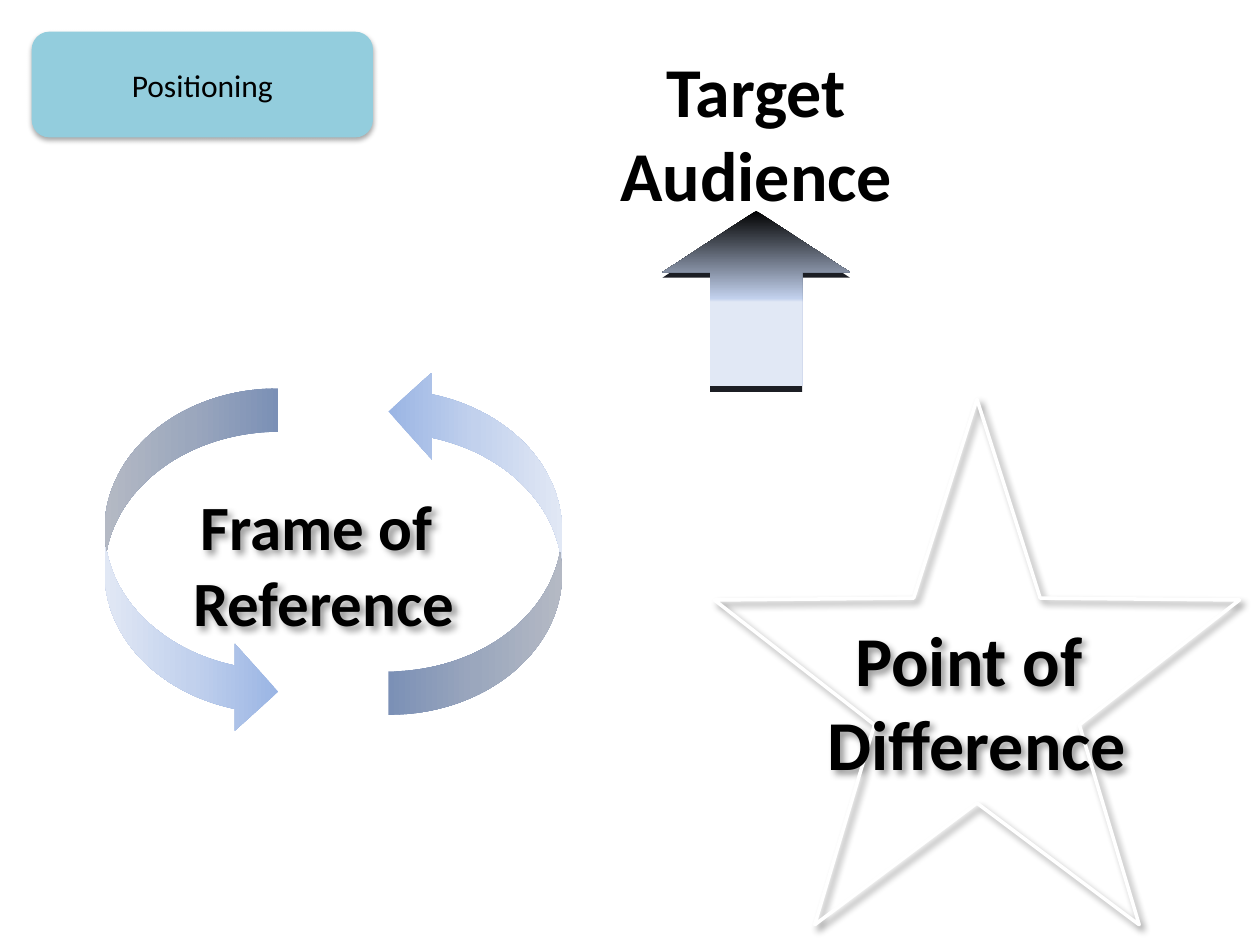
from dataclasses import dataclass

from lxml import etree
from pptx import Presentation
from pptx.dml.color import RGBColor
from pptx.enum import shapes, text
from pptx.oxml import ns
from pptx.util import Cm, Pt


@dataclass(frozen=True)
class Theme:
    font: str = "Calibri"
    ink: str = "000000"
    paper: str = "FFFFFF"
    tag: str = "93CDDD"
    edge: str = "1C1E24"
    cycle: tuple = ((0, "9AB5E4"), (50, "C2D1ED"), (100, "E1E8F5"))
    rise: tuple = ((0, "000000"), (50, "C2D1ED"), (52, "E1E8F5"), (100, "E1E8F5"))
    small: int = 18
    medium: int = 36
    large: int = 40


@dataclass(frozen=True)
class Box:
    """A rectangle in centimetres."""
    left: float
    top: float
    width: float
    height: float

    def inner(self, left, top, width, height):
        """A box placed relative to this one."""
        return Box(self.left + left, self.top + top, width, height)

    def lengths(self):
        return [Cm(n) for n in (self.left, self.top, self.width, self.height)]


THEME = Theme()
PRESET = shapes.MSO_SHAPE


def add_node(parent, tag, **attributes):
    node = etree.SubElement(parent, ns.qn(tag))
    for name, value in attributes.items():
        node.set(name, str(value))
    return node


def set_gradient(shape, stops, angle):
    """Fill with (percent, colour) stops; the angle runs clockwise."""
    shape.fill.background()
    properties = shape.element.spPr
    empty = properties.find(ns.qn("a:noFill"))
    gradient = etree.Element(ns.qn("a:gradFill"), rotWithShape="1")
    stop_list = add_node(gradient, "a:gsLst")
    for percent, colour in stops:
        stop = add_node(stop_list, "a:gs", pos=percent * 1000)
        add_node(stop, "a:srgbClr", val=colour)
    add_node(gradient, "a:lin", ang=angle * 60000, scaled=0)
    properties.replace(empty, gradient)


def set_shadow(shape, opacity, blur, distance, angle):
    shape.shadow.inherit = False
    effects = shape.element.spPr.find(ns.qn("a:effectLst"))
    shadow = add_node(effects, "a:outerShdw", blurRad=Pt(blur), dist=Pt(distance),
                      dir=angle * 60000, rotWithShape=0)
    colour = add_node(shadow, "a:srgbClr", val=THEME.ink)
    add_node(colour, "a:alpha", val=opacity * 1000)


def add_preset(parent, preset, box, adjustments=()):
    """Add a shape with no fill, line or shadow."""
    shape = parent.shapes.add_shape(preset, *box.lengths())
    for index, value in enumerate(adjustments):
        shape.adjustments[index] = value
    shape.fill.background()
    shape.line.fill.background()
    shape.shadow.inherit = False
    return shape


def set_fill(shape, colour):
    shape.fill.solid()
    shape.fill.fore_color.rgb = RGBColor.from_string(colour)


def write(shape, paragraphs, size, bold=True, wrap=False):
    frame = shape.text_frame
    frame.word_wrap = wrap
    for index, words in enumerate(paragraphs):
        para = frame.add_paragraph() if index else frame.paragraphs[0]
        para.text = words
        para.alignment = text.PP_ALIGN.CENTER
        para.font.name = THEME.font
        para.font.size = Pt(size)
        para.font.bold = bold
        para.font.color.rgb = RGBColor.from_string(THEME.ink)


def draw_tag(page, box):
    tag = add_preset(page, PRESET.ROUNDED_RECTANGLE, box, [0.167])
    set_fill(tag, THEME.tag)
    set_shadow(tag, 35, 3.1, 1.8, 90)
    write(tag, ["Positioning"], THEME.small, bold=False)
    tag.text_frame.vertical_anchor = text.MSO_ANCHOR.MIDDLE


def draw_reference(page, box):
    """Two curved arrows circling the caption."""
    group = page.shapes.add_group_shape()
    width, height, drop = 3.5, 6.99, 0.41
    for left, top, turn in ((0, drop, 0), (box.width - width, 0, 180)):
        arrow = add_preset(group, PRESET.CURVED_RIGHT_ARROW,
                           box.inner(left, top, width, height))
        arrow.rotation = turn
        set_gradient(arrow, THEME.cycle, 180)
    caption = group.shapes.add_textbox(*box.inner(1.5, 2.29, 5.84, 3.33).lengths())
    caption.fill.background()
    write(caption, ["Frame of \vReference"], THEME.medium)
    set_shadow(caption, 40, 4, 3, 45)


def draw_difference(page, box):
    star = add_preset(page, PRESET.STAR_5_POINT, box, [0.195, 1.051, 1.106])
    star.line.color.rgb = RGBColor.from_string(THEME.paper)
    star.line.width = Pt(2)
    set_shadow(star, 40, 4, 3, 45)
    write(star, ["Point of \vDifference"], THEME.large)
    star.text_frame.vertical_anchor = text.MSO_ANCHOR.MIDDLE


def draw_audience(page, box):
    """A raised arrow, with a dark lower edge, pointing at the caption."""
    group = page.shapes.add_group_shape()
    width, height, depth = 3.78, 3.54, 0.11
    left = (box.width - width) / 2
    top = box.height - height - depth
    for offset in (depth, 0):
        arrow = add_preset(group, PRESET.UP_ARROW,
                           box.inner(left, top + offset, width, height), [0.49, 0.35])
        if offset:
            set_fill(arrow, THEME.edge)
        else:
            set_gradient(arrow, THEME.rise, 90)
    caption = group.shapes.add_textbox(*box.inner(0, 0, box.width, 3.68).lengths())
    write(caption, ["Target", "Audience"], THEME.large, wrap=True)


def main():
    deck = Presentation()
    deck.slide_width, deck.slide_height = Cm(25.4), Cm(19.05)
    page = deck.slides.add_slide(deck.slide_layouts[6])
    draw_tag(page, Box(0.64, 0.64, 6.88, 2.13))
    draw_reference(page, Box(2.11, 7.42, 9.22, 7.4))
    draw_difference(page, Box(14.4, 8.05, 10.59, 10.59))
    draw_audience(page, Box(10.8, 0.84, 8.89, 7.06))
    deck.save("out.pptx")


if __name__ == "__main__":
    main()
